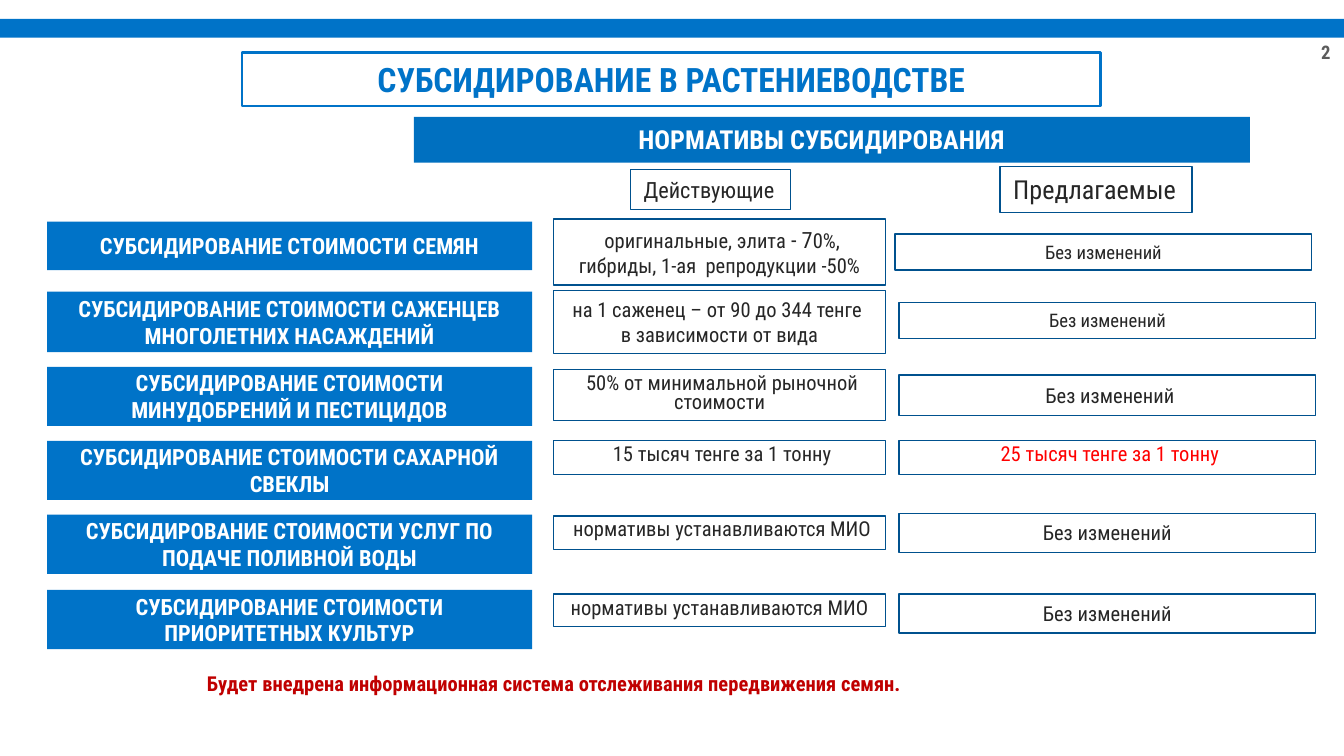
from pptx import Presentation
from pptx.dml.color import RGBColor
from pptx.enum.shapes import MSO_SHAPE as Shape
from pptx.enum.text import MSO_ANCHOR as Anchor, PP_ALIGN as Align
from pptx.util import Inches, Pt

FONT = "Roboto Condensed"
BLUE, HEADER_BLUE, BORDER = "0073C8", "0070C0", "00518E"
DARK, RED, NOTE_RED, GREY, WHITE = "262626", "FF0000", "C00000", "5C5C5C", "FFFFFF"
UNCHANGED = "Без изменений"
BY_AKIMAT = "нормативы устанавливаются МИО"
LEAD = (" ", 12)


def rgb(color):
    """Turn a hex string into a colour."""
    return RGBColor.from_string(color)


def write(frame, runs, color, bold=False, align=Align.CENTER,
          anchor=Anchor.TOP, spacing=None, indent=0.1, wrap=True):
    """Fill a text frame with one paragraph of (text, size) runs."""
    frame.word_wrap = wrap
    frame.vertical_anchor = anchor
    frame.margin_left = Inches(indent)
    frame.margin_right = Inches(0.1)
    frame.margin_top = frame.margin_bottom = Inches(0.05)
    paragraph = frame.paragraphs[0]
    paragraph.alignment = align
    if spacing:
        paragraph.line_spacing = Pt(spacing)
    for text, size in runs:
        run = paragraph.add_run()
        run.text = text
        run.font.name = FONT
        run.font.size = Pt(size)
        run.font.bold = bold
        run.font.color.rgb = rgb(color)


def panel(slide, box, fill=None, border=None, border_width=0.75):
    """Draw a plain rectangle and return its text frame."""
    rectangle = slide.shapes.add_shape(Shape.RECTANGLE, *map(Inches, box))
    rectangle.shadow.inherit = False
    if fill:
        rectangle.fill.solid()
        rectangle.fill.fore_color.rgb = rgb(fill)
    else:
        rectangle.fill.background()
    if border:
        rectangle.line.color.rgb = rgb(border)
        rectangle.line.width = Pt(border_width)
    else:
        rectangle.line.fill.background()
    return rectangle.text_frame


def caption(slide, box, text, size, color, **layout):
    """Place a bold line of text without a frame."""
    frame = slide.shapes.add_textbox(*map(Inches, box)).text_frame
    write(frame, [(text, size)], color, bold=True, **layout)


def heading(slide, left, top, width):
    """Place the top band, page number, title and header bar."""
    panel(slide, (left, top, width, 0.14), fill=BLUE)
    caption(slide, (left + 9.69, top + 0.07, 0.35, 0.36), "2", 10, GREY,
            anchor=Anchor.MIDDLE)
    title = panel(slide, (left + 1.8, top + 0.25, 6.39, 0.4), border=BLUE, border_width=1.5)
    write(title, [("СУБСИДИРОВАНИЕ В РАСТЕНИЕВОДСТВЕ", 18)], BLUE, bold=True)
    norms = panel(slide, (left + 3.08, top + 0.73, 6.22, 0.34), fill=HEADER_BLUE)
    write(norms, [("НОРМАТИВЫ СУБСИДИРОВАНИЯ", 14)], WHITE, bold=True,
          align=Align.LEFT, indent=1.67)


def column_titles(slide, left, top):
    """Place the titles of the current and proposed columns."""
    for box, text, size in (
        ((left, top + 0.02, 1.19, 0.3), "Действующие", 12),
        ((left + 2.75, top, 1.43, 0.34), "Предлагаемые", 14),
    ):
        write(panel(slide, box, border=BORDER), [(text, size)], DARK,
              align=Align.LEFT, wrap=False)


def subsidy_row(slide, left, top, label, current, proposed):
    """Place one subsidy: its label, current norm and proposed norm."""
    text, height = label
    write(panel(slide, (left, top, 3.61, height), fill=BLUE), [(text, 12)], WHITE,
          bold=True, anchor=Anchor.MIDDLE)
    runs, offset, height, spacing = current
    write(panel(slide, (left + 3.77, top + offset, 2.47, height), border=BORDER),
          runs, DARK, spacing=spacing)
    runs, shift, offset, height, color, spacing = proposed
    write(panel(slide, (left + 6.34 + shift, top + offset, 3.1, height), border=BORDER),
          runs, color, spacing=spacing)


ROWS = [
    (1.65, ("СУБСИДИРОВАНИЕ СТОИМОСТИ СЕМЯН", 0.36),
     ([LEAD, ("оригинальные, элита ", 11), ("- 7", 12),
       ("0%, гибриды, 1-ая  репродукции -50%", 11)], -0.02, 0.49, None),
     ([(UNCHANGED, 10)], -0.03, 0.09, 0.27, DARK, None)),
    (2.17, ("СУБСИДИРОВАНИЕ СТОИМОСТИ САЖЕНЦЕВ МНОГОЛЕТНИХ НАСАЖДЕНИЙ", 0.45),
     ([("на 1 саженец – от 90 до 344 тенге  в зависимости от вида", 11)], -0.01, 0.47, None),
     ([(UNCHANGED, 10)], 0, 0.08, 0.27, DARK, None)),
    (2.73, ("СУБСИДИРОВАНИЕ СТОИМОСТИ МИНУДОБРЕНИЙ И ПЕСТИЦИДОВ", 0.44),
     ([LEAD, ("50% от минимальной рыночной стоимости", 11)], 0.02, 0.38, 10),
     ([LEAD, (UNCHANGED, 11)], 0, 0.06, 0.3, DARK, None)),
    (3.28, ("СУБСИДИРОВАНИЕ СТОИМОСТИ САХАРНОЙ СВЕКЛЫ", 0.44),
     ([LEAD, ("15 тысяч тенге за 1 тонну", 11)], 0, 0.25, 10),
     ([LEAD, ("25 тысяч тенге за 1 тонну", 11)], 0, 0, 0.25, RED, 10)),
    (3.83, ("СУБСИДИРОВАНИЕ СТОИМОСТИ УСЛУГ ПО ПОДАЧЕ ПОЛИВНОЙ ВОДЫ", 0.44),
     ([LEAD, (BY_AKIMAT, 11)], 0.01, 0.25, 10),
     ([(UNCHANGED, 11)], 0, -0.01, 0.29, DARK, None)),
    (4.39, ("СУБСИДИРОВАНИЕ СТОИМОСТИ ПРИОРИТЕТНЫХ КУЛЬТУР", 0.44),
     ([(BY_AKIMAT, 11)], 0.03, 0.24, 10),
     ([(UNCHANGED, 11)], 0, 0.03, 0.29, DARK, None)),
]


def main():
    """Build and save the slide."""
    deck = Presentation()
    deck.slide_width = Inches(10)
    deck.slide_height = deck.slide_width * 9 // 16
    slide = deck.slides.add_slide(deck.slide_layouts[6])
    heading(slide, 0, 0.14, 10)
    column_titles(slide, 4.69, 1.24)
    for top, label, current, proposed in ROWS:
        subsidy_row(slide, 0.35, top, label, current, proposed)
    caption(slide, (0, 4.94, 9.88, 0.45),
            "Будет внедрена информационная система отслеживания передвижения семян.",
            11, NOTE_RED, align=Align.LEFT, indent=1.54)
    deck.save("out.pptx")


if __name__ == "__main__":
    main()
